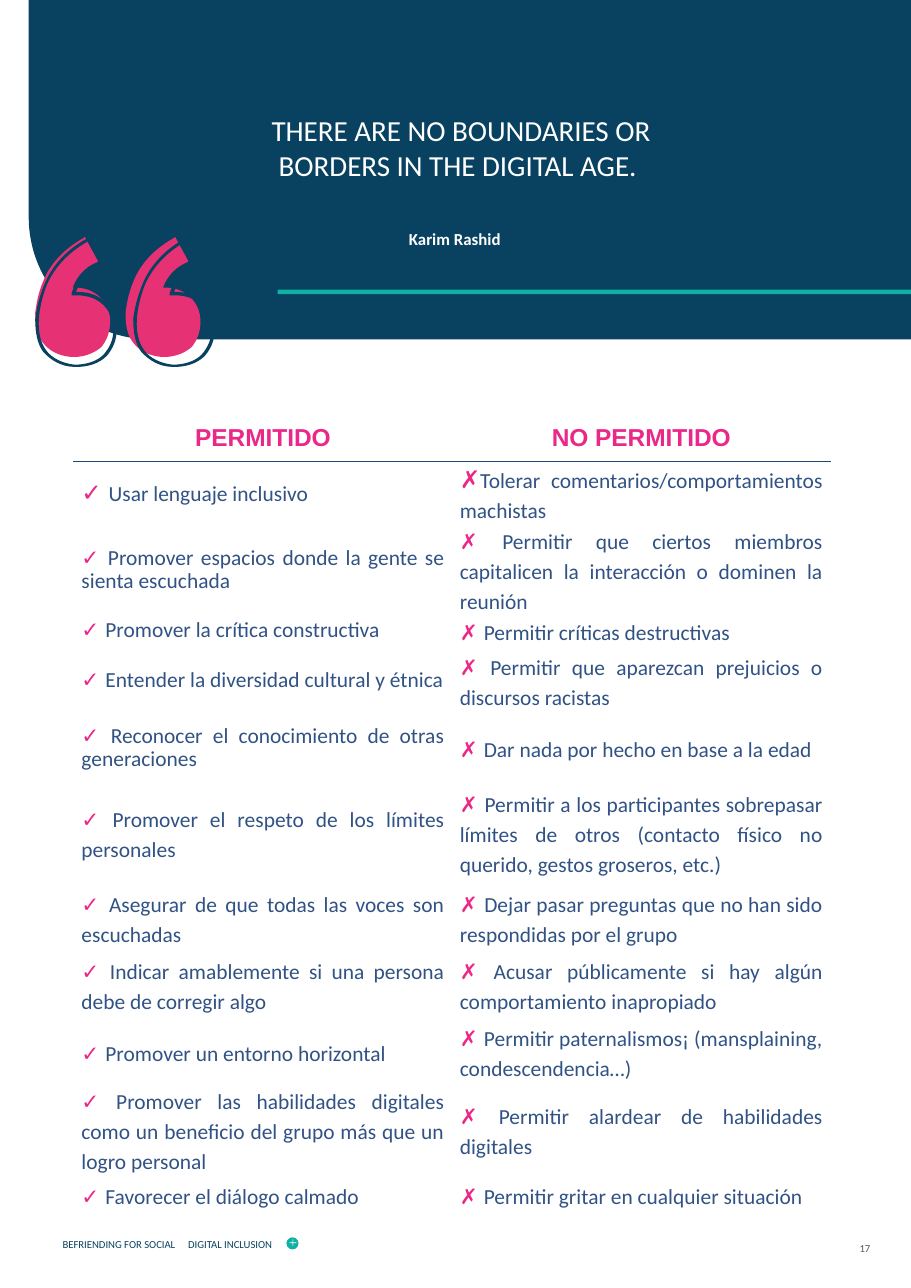
import dataclasses

import pptx
import pptx.dml.color
import pptx.enum.shapes
import pptx.enum.text
import pptx.oxml
import pptx.oxml.ns
import pptx.util

Inches = pptx.util.Inches
Pt = pptx.util.Pt
RGB = pptx.dml.color.RGBColor.from_string
SHAPE = pptx.enum.shapes.MSO_SHAPE
ALIGN = pptx.enum.text.PP_ALIGN
ANCHOR = pptx.enum.text.MSO_ANCHOR
DRAWING_NS = pptx.oxml.ns.nsdecls("a")


@dataclasses.dataclass(frozen=True)
class Theme:
    navy: str = "084260"
    teal: str = "10B1A2"
    rose: str = "E63275"
    magenta: str = "EB2788"
    ink: str = "305284"
    rule: str = "1F497D"
    grey: str = "595959"
    white: str = "FFFFFF"
    quote_size: int = 19
    heading_size: int = 16
    item_size: int = 14
    author_size: int = 11
    footer_size: int = 7


theme = Theme()


def add_run(paragraph, text, size, color, name="Calibri", bold=False):
    run = paragraph.add_run()
    run.text = text
    for attribute, value in {"size": Pt(size), "name": name, "bold": bold}.items():
        setattr(run.font, attribute, value)
    run.font.color.rgb = RGB(color)


def add_outline(shapes, contours, color):
    """Fill closed contours; a segment is a point or a cubic of six numbers."""
    builder = None
    for start, *segments in contours:
        if builder is None:
            builder = shapes.build_freeform(Inches(start[0]), Inches(start[1]))
        else:
            builder.move_to(Inches(start[0]), Inches(start[1]))
        builder.add_line_segments([(Inches(s[-2]), Inches(s[-1])) for s in segments], close=False)
        builder.add_line_segments([], close=True)
    outline = builder.convert_to_shape()
    straight = list(outline._element.iter(pptx.oxml.ns.qn("a:lnTo")))
    drawn = [segment for _, *segments in contours for segment in (*segments, None)]
    if len(straight) < len(drawn):
        drawn = [segment for segment in drawn if segment]
    for line, segment in zip(straight, drawn):
        if segment and len(segment) == 6:
            corners = "".join(
                f'<a:pt x="{Inches(x) - outline.left}" y="{Inches(y) - outline.top}"/>'
                for x, y in zip(segment[::2], segment[1::2]))
            line.getparent().replace(line, pptx.oxml.parse_xml(
                f"<a:cubicBezTo {DRAWING_NS}>{corners}</a:cubicBezTo>"))
    outline.shadow.inherit = False
    outline.fill.solid()
    outline.fill.fore_color.rgb = RGB(color)
    outline.line.fill.background()


deck = pptx.Presentation()
deck.slide_width, deck.slide_height = Inches(8.27), Inches(11.69)
shapes = deck.slides.add_slide(deck.slide_layouts[6]).shapes

# Banner, teal bar and footer badge
for kind, box, color, rotation, adjustment in (
    (SHAPE.ROUND_1_RECTANGLE, (0.26, 0, 8.01, 3.08), theme.navy, 180, 0.36),
    (SHAPE.RECTANGLE, (2.52, 2.63, 5.75, 0.04), theme.teal, 0, None),
    (SHAPE.OVAL, (2.6, 11.23, 0.11, 0.11), theme.teal, 0, None),
    (SHAPE.CROSS, (2.63, 11.25, 0.06, 0.06), theme.white, 0, 0.46),
):
    block = shapes.add_shape(kind, *map(Inches, box))
    block.shadow.inherit = False
    block.fill.solid()
    block.fill.fore_color.rgb = RGB(color)
    block.line.fill.background()
    block.rotation = rotation
    if adjustment is not None:
        block.adjustments[0] = adjustment

# Quotation, author, footer and page number
for box, text, size, color, align, anchor, bold in (
    ((2.08, 0.57, 4.21, 1.53), "THERE ARE NO BOUNDARIES OR BORDERS IN THE DIGITAL AGE. ",
     theme.quote_size, theme.white, ALIGN.CENTER, ANCHOR.MIDDLE, False),
    ((1.38, 2.03, 5.5, 0.3), "Karim Rashid",
     theme.author_size, theme.white, ALIGN.CENTER, ANCHOR.TOP, True),
    ((0.47, 11.09, 4.03, 0.4), "BEFRIENDING FOR SOCIAL\tDIGITAL INCLUSION",
     theme.footer_size, theme.navy, ALIGN.LEFT, ANCHOR.MIDDLE, False),
    ((7.54, 11.07, 0.46, 0.51), "17",
     theme.footer_size, theme.grey, ALIGN.RIGHT, ANCHOR.MIDDLE, False),
):
    frame = shapes.add_textbox(*map(Inches, box)).text_frame
    frame.word_wrap = True
    frame.vertical_anchor = anchor
    line = frame.paragraphs[0]
    line.alignment = align
    if "\t" in text:
        line._p.get_or_add_pPr().append(pptx.oxml.parse_xml(
            f'<a:tabLst {DRAWING_NS}><a:tab pos="{Inches(1.14)}" algn="l"/></a:tabLst>'))
    add_run(line, text, size, color, bold=bold)

# Opening quotation marks: a solid pair and an outlined pair
solid_mark = [[
    (0.67, 3.24), (0.67, 3.24, 0.66, 3.24, 0.65, 3.24), (0.54, 3.23, 0.45, 3.19, 0.39, 3.11),
    (0.34, 3.05, 0.32, 2.96, 0.32, 2.84), (0.33, 2.76, 0.35, 2.65, 0.39, 2.56),
    (0.45, 2.4, 0.58, 2.26, 0.76, 2.16), (0.77, 2.15), (0.89, 2.37), (0.88, 2.38),
    (0.78, 2.42, 0.7, 2.5, 0.66, 2.61), (0.67, 2.61), (0.77, 2.61, 0.85, 2.64, 0.91, 2.7),
    (0.97, 2.76, 1, 2.83, 1, 2.92), (1, 3.01, 0.97, 3.09, 0.92, 3.15),
    (0.85, 3.21, 0.76, 3.24, 0.67, 3.24),
]]
outlined_mark = [[
    (0.42, 3.18), (0.47, 3.25, 0.57, 3.3, 0.68, 3.31), (0.78, 3.31, 0.88, 3.28, 0.94, 3.22),
    (1, 3.15, 1.03, 3.08, 1.03, 2.99), (1.03, 2.9, 1, 2.83, 0.94, 2.77),
    (0.88, 2.71, 0.8, 2.68, 0.69, 2.68), (0.65, 2.68), (0.65, 2.66),
    (0.7, 2.52, 0.79, 2.43, 0.9, 2.38), (0.8, 2.19), (0.62, 2.29, 0.49, 2.43, 0.42, 2.6),
    (0.35, 2.79, 0.31, 3.03, 0.42, 3.18),
], [
    (0.7, 3.33), (0.69, 3.33, 0.69, 3.33, 0.68, 3.33), (0.56, 3.33, 0.46, 3.27, 0.39, 3.19),
    (0.34, 3.12, 0.32, 3.02, 0.32, 2.9), (0.33, 2.8, 0.36, 2.69, 0.4, 2.59),
    (0.47, 2.41, 0.61, 2.26, 0.8, 2.16), (0.82, 2.15), (0.95, 2.39), (0.93, 2.39),
    (0.82, 2.44, 0.74, 2.52, 0.69, 2.65), (0.7, 2.65), (0.81, 2.65, 0.9, 2.68, 0.96, 2.75),
    (1.03, 2.81, 1.06, 2.89, 1.06, 2.99), (1.06, 3.08, 1.03, 3.16, 0.97, 3.23),
    (0.9, 3.3, 0.8, 3.33, 0.7, 3.33),
]]
for mark, pitch, color in ((solid_mark, 0.82, theme.rose), (outlined_mark, 0.89, theme.navy)):
    pair = [[tuple(v + shift * (i % 2 == 0) for i, v in enumerate(segment)) for segment in contour]
            for shift in (0, pitch) for contour in mark]
    add_outline(shapes, pair, color)

# Table of what is and is not allowed
rules = [
    ("PERMITIDO", "NO PERMITIDO"),
    ("Usar lenguaje inclusivo", "Tolerar comentarios/comportamientos machistas"),
    ("Promover espacios donde la gente se sienta escuchada",
     "Permitir que ciertos miembros capitalicen la interacción o dominen la reunión"),
    ("Promover la crítica constructiva", "Permitir críticas destructivas"),
    ("Entender la diversidad cultural y étnica",
     "Permitir que aparezcan prejuicios o discursos racistas"),
    ("Reconocer el conocimiento de otras generaciones", "Dar nada por hecho en base a la edad"),
    ("Promover el respeto de los límites personales",
     "Permitir a los participantes sobrepasar límites de otros "
     "(contacto físico no querido, gestos groseros, etc.)"),
    ("Asegurar de que todas las voces son escuchadas",
     "Dejar pasar preguntas que no han sido respondidas por el grupo"),
    ("Indicar amablemente si una persona debe de corregir algo",
     "Acusar públicamente si hay algún comportamiento inapropiado"),
    ("Promover un entorno horizontal", "Permitir paternalismos¡ (mansplaining, condescendencia…)"),
    ("Promover las habilidades digitales como un beneficio del grupo más que un logro personal",
     "Permitir alardear de habilidades digitales"),
    ("Favorecer el diálogo calmado", "Permitir gritar en cualquier situación"),
]
row_heights = [0.4, 0.58, 0.61, 0.3, 0.61, 0.61, 0.93, 0.61, 0.61, 0.61, 0.61, 0.38]
table = shapes.add_table(len(rules), 2, *map(Inches, (0.67, 3.79, 6.87, 6.86))).table
table.first_row = table.horz_banding = False
for row, (pair, height) in enumerate(zip(rules, row_heights)):
    table.rows[row].height = Inches(height)
    for column, text in enumerate(pair):
        cell = table.cell(row, column)
        for attribute, value in {
            "margin_left": Inches(0.07), "margin_right": Inches(0.07),
            "margin_top": 0, "margin_bottom": 0, "vertical_anchor": ANCHOR.MIDDLE,
        }.items():
            setattr(cell, attribute, value)
        for side in "LRTB":
            color = theme.rule if (row, side) in ((0, "B"), (1, "T")) else theme.white
            cell._tc.get_or_add_tcPr().append(pptx.oxml.parse_xml(
                f'<a:ln{side} {DRAWING_NS} w="{Pt(1)}">'
                f'<a:solidFill><a:srgbClr val="{color}"/></a:solidFill></a:ln{side}>'))
        cell.fill.background()
        entry = cell.text_frame.paragraphs[0]
        entry.alignment = ALIGN.JUSTIFY if row else ALIGN.CENTER
        entry.line_spacing = 0.9 if row == 0 or (column == 0 and row < 6) else 1.15
        if row == 0:
            add_run(entry, text, theme.heading_size, theme.magenta, "Arial", True)
            continue
        sign = "✗" if (row, column) == (1, 1) else ("✓ ", "✗ ")[column]
        sign_size = theme.heading_size if row == 1 else theme.item_size
        add_run(entry, sign, sign_size, theme.magenta, "Arial", True)
        add_run(entry, text, theme.item_size, theme.ink)

deck.save("out.pptx")
